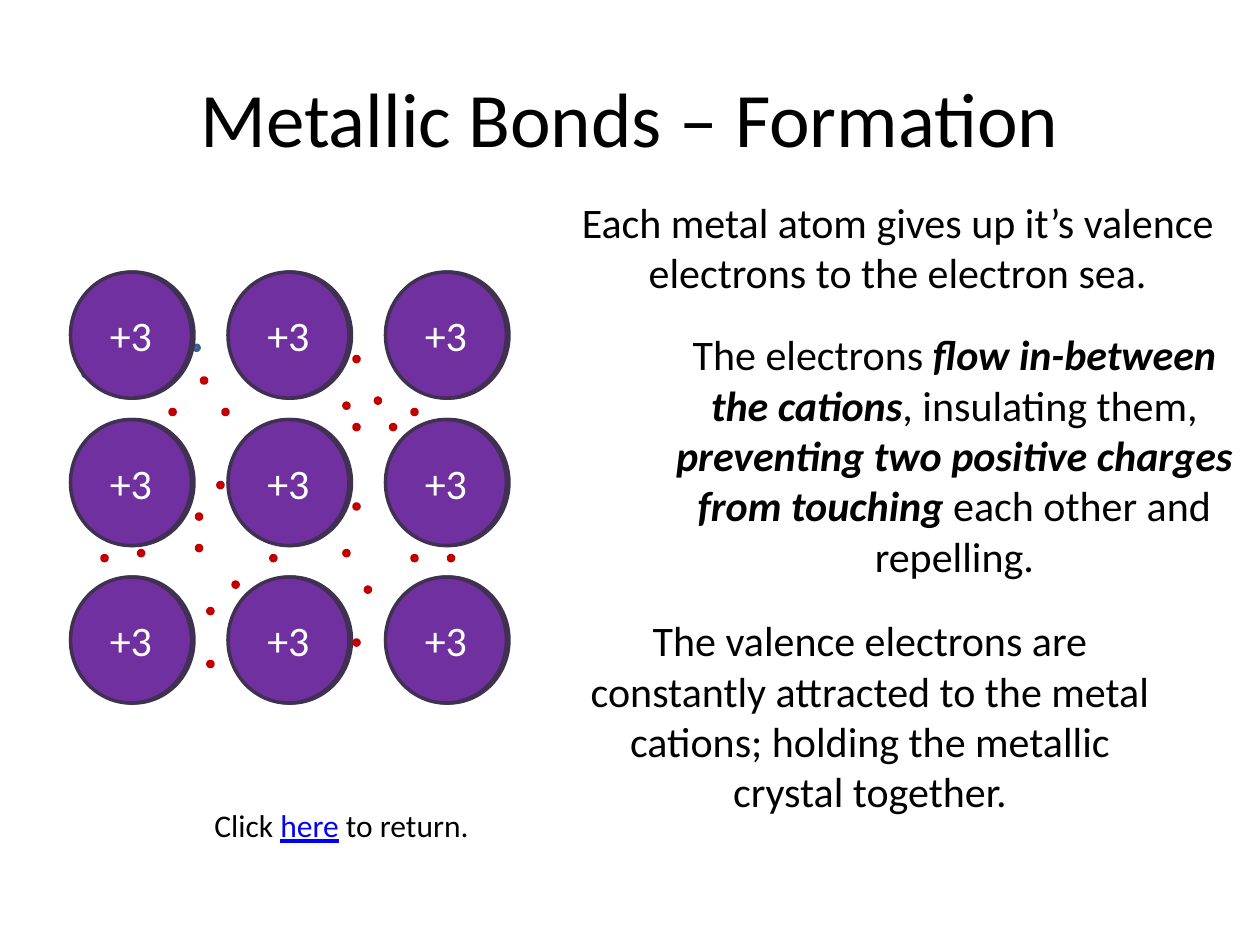
from itertools import product

from pptx import Presentation
from pptx.dml.color import RGBColor
from pptx.enum import shapes, text
from pptx.util import Inches, Pt

BLACK = RGBColor(0x00, 0x00, 0x00)
WHITE = RGBColor(0xFF, 0xFF, 0xFF)
LINK_BLUE = RGBColor(0x00, 0x00, 0xFF)
PURPLE = RGBColor(0x70, 0x30, 0xA0)
DARK_PURPLE = RGBColor(0x40, 0x31, 0x52)
RED = RGBColor(0xFF, 0x00, 0x00)
DARK_RED = RGBColor(0xC0, 0x00, 0x00)
SKY_BLUE = RGBColor(0x00, 0xB0, 0xF0)
STEEL_BLUE = RGBColor(0x3A, 0x5F, 0x8C)

STRONG = {"bold": True, "italic": True}
LINK = {"underline": True, "color": LINK_BLUE}

CATION_SIZE = (0.96, 1)
CATION_COLUMNS = (0.56, 1.81, 3.06)
CATION_ROWS = (2.16, 3.33, 4.58)
BACK_LAYER_SHIFT = 0.02
ELECTRON_SIZE = (0.04, 0.04)
BOUND_ELECTRONS = [(1.54, 2.74), (0.66, 2.95)]
FREE_ELECTRONS = [
    (1.35, 3.25), (1.77, 3.25), (1.6, 3), (2.98, 3.16), (2.81, 3.37),
    (2.81, 2.83), (2.73, 3.2), (3.1, 3.37), (3.27, 3.25), (1.73, 3.83),
    (1.65, 5.25), (1.56, 4.08), (0.81, 4.41), (1.65, 4.83), (2.15, 4.41),
    (2.9, 4.66), (2.81, 5.08), (2.81, 4), (2.73, 4.37), (3.56, 4.41),
    (3.27, 4.41), (1.1, 4.37), (1.85, 4.62), (1.56, 4.33),
]

PASSAGES = [
    ((4.5, 1.51, 5.25, 0.91), 24, [
        ("Each metal atom gives up it’s valence electrons to the electron sea.", {}),
    ]),
    ((5.16, 2.56, 4.83, 2.12), 24, [
        ("The electrons ", {}),
        ("flow in-between the cations", STRONG),
        (", insulating them, ", {}),
        ("preventing two positive charges from touching", STRONG),
        (" each other and repelling.", {}),
    ]),
    ((4.49, 4.83, 4.83, 1.72), 24, [
        ("The valence electrons are constantly attracted to the metal cations; "
         "holding the metallic crystal together.", {}),
    ]),
    ((0, 6.35, 5.42, 0.4), 18, [
        ("Click ", {}), ("here", LINK), (" to return.", {}),
    ]),
]


def write(frame, spans, size, color=BLACK):
    """Fill the frame with one centred paragraph of (wording, format) spans."""
    frame.word_wrap = True
    para = frame.paragraphs[0]
    para.alignment = text.PP_ALIGN.CENTER
    for wording, changes in spans:
        span = para.add_run()
        span.text = wording
        values = {"name": "Calibri", "size": Pt(size), "color": color, **changes}
        span.font.color.rgb = values.pop("color")
        for name, value in values.items():
            setattr(span.font, name, value)


def set_title(page, wording):
    title = page.shapes.title
    place = {"left": 0.5, "top": 0.3, "width": 9, "height": 1.25}
    for name, value in place.items():
        setattr(title, name, Inches(value))
    title.text_frame.vertical_anchor = text.MSO_ANCHOR.MIDDLE
    write(title.text_frame, [(wording, {})], 44)


def add_passage(page, place, size, spans):
    box = page.shapes.add_textbox(*map(Inches, place))
    write(box.text_frame, spans, size)


def add_circle(page, place, size, fill, line):
    circle = page.shapes.add_shape(
        shapes.MSO_SHAPE.OVAL, *map(Inches, (*place, *size)))
    circle.shadow.inherit = False
    circle.fill.solid()
    circle.fill.fore_color.rgb = fill
    circle.line.color.rgb = line
    circle.line.width = Pt(2)
    return circle


def add_cations(page, shift):
    for top, left in product(CATION_ROWS, CATION_COLUMNS):
        cation = add_circle(page, (left + shift, top), CATION_SIZE, PURPLE, DARK_PURPLE)
        cation.text_frame.vertical_anchor = text.MSO_ANCHOR.MIDDLE
        write(cation.text_frame, [("+3", {})], 24, WHITE)


def add_electrons(page, places, fill, line):
    for place in places:
        add_circle(page, place, ELECTRON_SIZE, fill, line)


def main():
    deck = Presentation()
    deck.slide_width, deck.slide_height = Inches(10), Inches(7.5)
    page = deck.slides.add_slide(deck.slide_layouts.get_by_name("Title Only"))
    set_title(page, "Metallic Bonds – Formation")
    add_electrons(page, BOUND_ELECTRONS, SKY_BLUE, STEEL_BLUE)
    for shift in (BACK_LAYER_SHIFT, 0):
        add_cations(page, shift)
    add_electrons(page, FREE_ELECTRONS, RED, DARK_RED)
    for place, size, spans in PASSAGES:
        add_passage(page, place, size, spans)
    deck.save("out.pptx")


if __name__ == "__main__":
    main()
